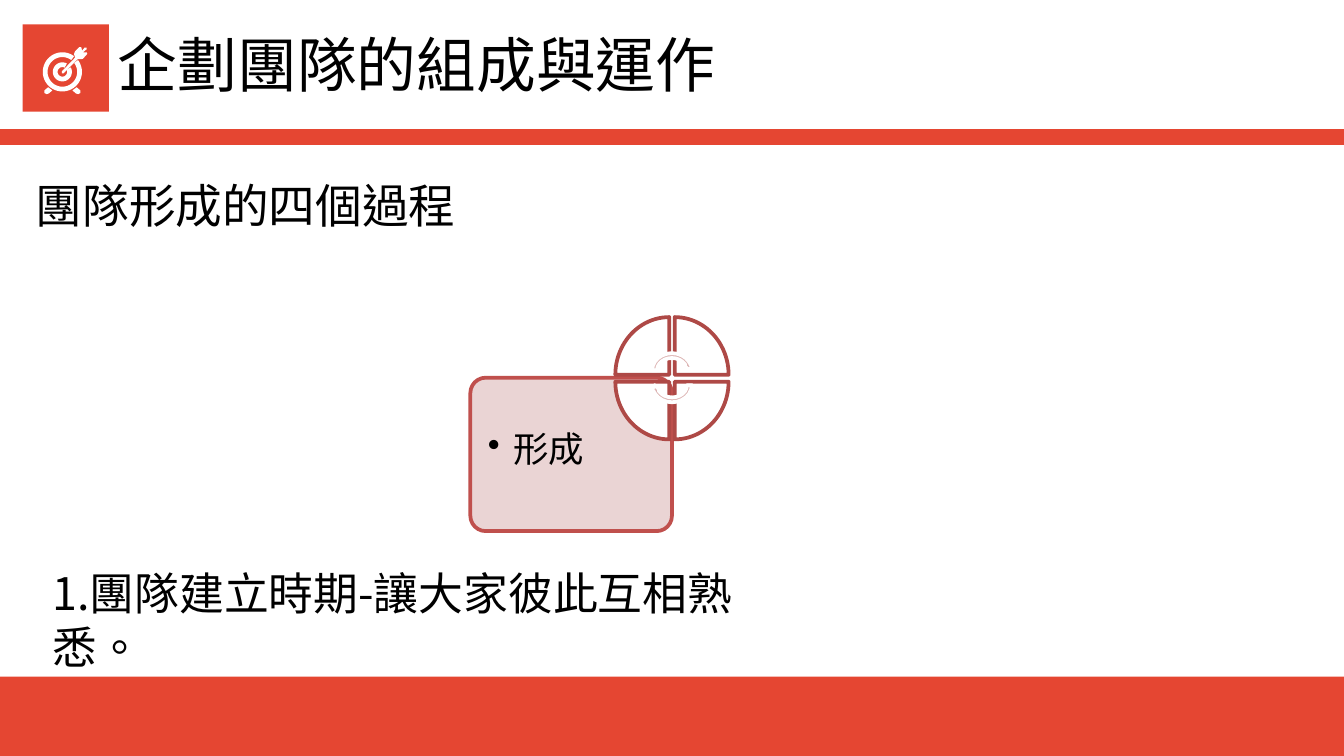
import math

import pptx
import pptx.dml.color
import pptx.enum.shapes
import pptx.enum.text
import pptx.oxml
import pptx.oxml.ns
import pptx.util
from lxml import etree

Cm = pptx.util.Cm
Pt = pptx.util.Pt
SHAPE = pptx.enum.shapes.MSO_SHAPE
ANCHOR = pptx.enum.text.MSO_ANCHOR

CJK = "Noto Sans CJK JP"
RED, WHITE, BLACK = "E54632", "FFFFFF", "000000"
WEDGE_LINE = "AE4946"


def color(value):
    return pptx.dml.color.RGBColor.from_string(value)


def style(shape, fill, line=None):
    shape.shadow.inherit = False
    shape.fill.solid()
    shape.fill.fore_color.rgb = color(fill)
    if line:
        shape.line.color.rgb = color(line)
        shape.line.width = Pt(2)
    else:
        shape.line.fill.background()


def add_block(slide, kind, box, fill, line=None, rotation=0):
    block = slide.shapes.add_shape(kind, *map(Cm, box))
    style(block, fill, line)
    block.rotation = rotation
    return block


def add_outline(slide, points, fill):
    (x, y), *rest = [(Cm(px), Cm(py)) for px, py in points]
    builder = slide.shapes.build_freeform(x, y)
    builder.add_line_segments(rest, close=True)
    style(builder.convert_to_shape(), fill)


def add_text(slide, box, text, size, anchor=ANCHOR.TOP, inset=(0.25, 0.25)):
    label = slide.shapes.add_textbox(*map(Cm, box))
    frame = label.text_frame
    frame.word_wrap = True
    frame.vertical_anchor = anchor
    frame.margin_left = frame.margin_right = Cm(inset[0])
    frame.margin_top = frame.margin_bottom = Cm(inset[1])
    paragraph = frame.paragraphs[0]
    paragraph._p.get_or_add_pPr().set("hangingPunct", "0")
    run = paragraph.add_run()
    run.text = text
    run.font.size = Pt(size)
    run.font.name = CJK
    run.font.color.rgb = color(BLACK)
    properties = run.font._element
    properties.set("lang", "zh-TW")
    east_asian = etree.SubElement(properties, pptx.oxml.ns.qn("a:ea"))
    east_asian.set("typeface", CJK)
    return frame


def add_bullet(paragraph, indent):
    properties = paragraph._p.get_or_add_pPr()
    properties.set("marL", str(Cm(indent)))
    properties.set("indent", str(-Cm(indent)))
    bullet = etree.SubElement(properties, pptx.oxml.ns.qn("a:buChar"))
    bullet.set("char", "•")


def set_opacity(shape, percent):
    fill = shape._element.spPr.find(pptx.oxml.ns.qn("a:solidFill"))
    alpha = etree.SubElement(fill[0], pptx.oxml.ns.qn("a:alpha"))
    alpha.set("val", str(percent * 1000))


def open_ring(center, outer, inner, start, end):
    """Points of a ring running counterclockwise from start to end degrees."""
    angles = [math.radians(start + (end - start) * i / 48) for i in range(49)]

    def arc(radius, turns):
        return [(center[0] + radius * math.cos(a),
                 center[1] - radius * math.sin(a)) for a in turns]

    return arc(outer, angles) + arc(inner, reversed(angles))


def add_target_icon(slide):
    add_block(slide, SHAPE.RECTANGLE, (0.43, 0.46, 1.63, 1.65), RED)
    center = (1.18, 1.36)

    # Rings, open at the upper right where the arrow enters
    add_outline(slide, open_ring(center, 0.37, 0.28, 53, 397), WHITE)
    add_outline(slide, open_ring(center, 0.18, 0.09, 62, 388), WHITE)

    # Feet
    foot = [(0.91, 1.65), (0.84, 1.71), (0.84, 1.76), (0.88, 1.78),
            (0.92, 1.77), (0.99, 1.71)]
    add_outline(slide, foot, WHITE)
    add_outline(slide, [(2 * center[0] - x, y) for x, y in foot], WHITE)

    # Arrow
    arrow = [(1.52, 0.89), (1.5, 0.89), (1.42, 0.97), (1.4, 1.02),
             (1.42, 1.09), (1.17, 1.35), (1.17, 1.39), (1.2, 1.39),
             (1.47, 1.12), (1.54, 1.12), (1.57, 1.11), (1.65, 1.02),
             (1.64, 0.99), (1.57, 0.99), (1.64, 0.93), (1.64, 0.9),
             (1.6, 0.9), (1.55, 0.96), (1.54, 0.9)]
    add_outline(slide, arrow, WHITE)


def add_cycle(slide):
    # Card of the first stage
    card = add_block(slide, SHAPE.ROUNDED_RECTANGLE, (8.89, 7.14, 3.81, 2.9),
                     "E8D0D0", "C0504D")
    card.adjustments[0] = 0.1
    set_opacity(card, 90)
    stage = add_text(slide, (8.97, 7.92, 2.54, 2.06), "形成", 19).paragraphs[0]
    stage.line_spacing = 0.9
    add_bullet(stage, 0.48)

    # Four wedges, clockwise from the upper left
    center_x, center_y = 12.7, 7.15
    for i, (side, level) in enumerate([(-1, -1), (1, -1), (1, 1), (-1, 1)]):
        width, height = (1.09, 1.02) if i % 2 else (1.02, 1.09)
        add_block(slide, SHAPE.PIE_WEDGE,
                  (center_x + side * 0.56 - width / 2,
                   center_y + level * 0.61 - height / 2, width, height),
                  WHITE, WEDGE_LINE, 90 * i)

    # Turning arrows in the middle
    for top, rotation in ((6.63, 0), (6.91, 180)):
        add_block(slide, SHAPE.CIRCULAR_ARROW, (12.28, top, 0.84, 0.74),
                  "DCB3B2", WHITE, rotation)


def main():
    deck = pptx.Presentation()
    deck.slide_width, deck.slide_height = Cm(25.4), Cm(14.29)
    slide = deck.slides.add_slide(deck.slide_layouts[6])

    # Footer and header bands
    add_block(slide, SHAPE.RECTANGLE, (0, 12.79, 25.4, 1.5), RED)
    add_block(slide, SHAPE.RECTANGLE, (0, 2.44, 25.4, 0.3), RED)

    # Heading
    add_text(slide, (1.98, -0.03, 11.99, 2.46), "企劃團隊的組成與運作", 32,
             ANCHOR.MIDDLE)
    add_target_icon(slide)
    add_text(slide, (0.43, 2.95, 9.65, 1.83), "團隊形成的四個過程", 25,
             ANCHOR.MIDDLE)

    add_cycle(slide)

    # Explanation of the stage
    explanation = add_text(slide, (0.74, 10.57, 14.96, 1.27),
                           "1.團隊建立時期-讓大家彼此互相熟悉。", 24,
                           inset=(0.25, 0.13))
    explanation.auto_size = pptx.enum.text.MSO_AUTO_SIZE.SHAPE_TO_FIT_TEXT

    deck.save("out.pptx")


if __name__ == "__main__":
    main()
